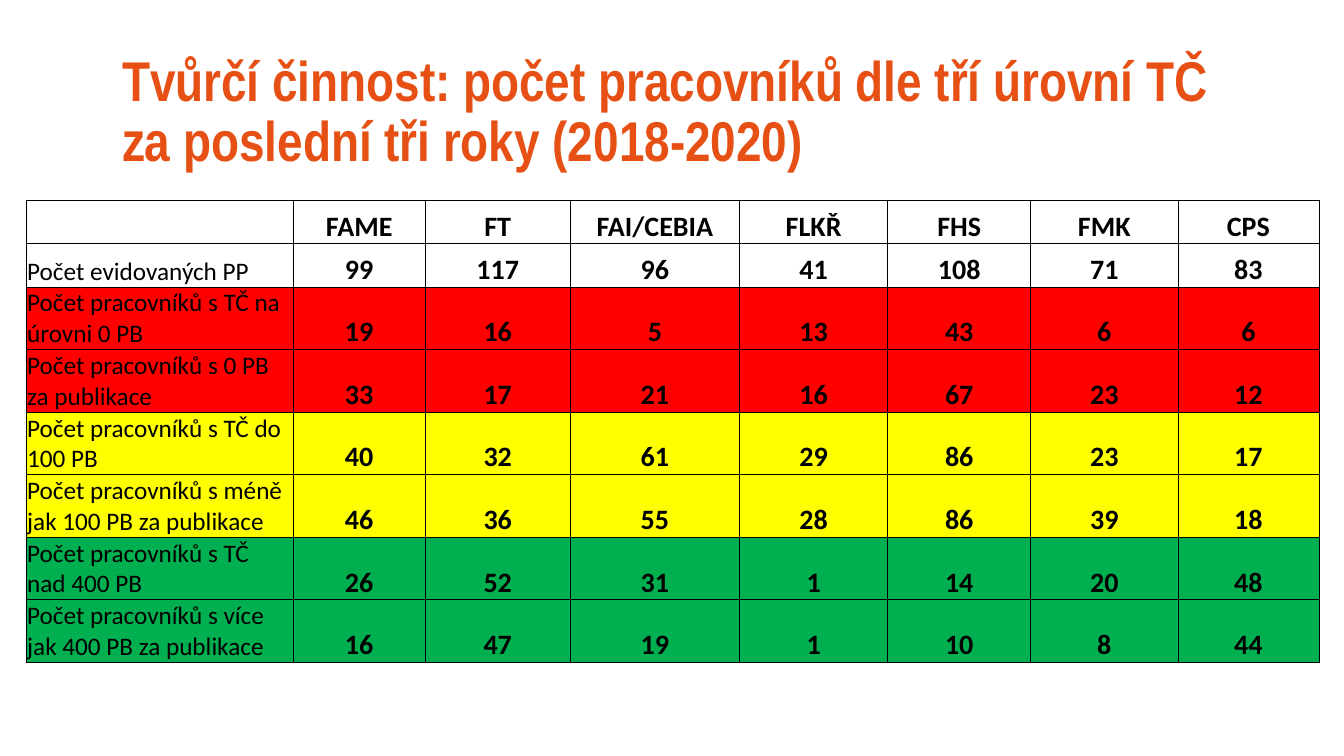
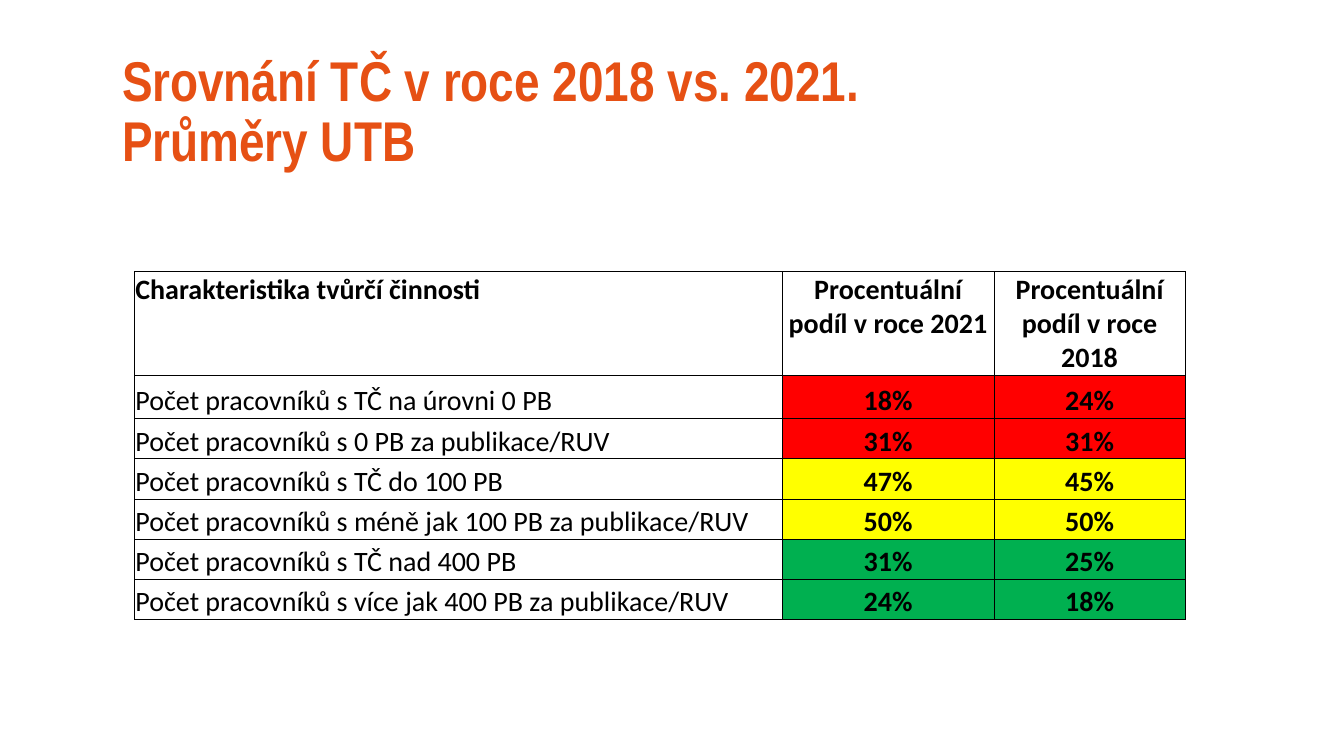
from dataclasses import dataclass

from lxml import etree
from pptx import Presentation, util as u
from pptx.dml.color import RGBColor
from pptx.enum import text
from pptx.oxml import ns

W, H = u.Inches(13.33), u.Inches(7.5)
TITLE_ONLY = 5


@dataclass(frozen=True)
class Theme:
    accent: RGBColor = RGBColor.from_string("E65014")
    ink: RGBColor = RGBColor.from_string("000000")
    low: RGBColor = RGBColor.from_string("FF0000")
    middle: RGBColor = RGBColor.from_string("FFFF00")
    high: RGBColor = RGBColor.from_string("00B050")
    title_font: str = "Arial Narrow"
    table_font: str = "Calibri"
    title_size: float = 40
    value_size: float = 20
    label_size: float = 18
    border: float = 0.5
    title_box: tuple = (8.33, 5.33, 84.82, 19.33)


T = Theme()
LEVELS = [None, None, T.low, T.low, T.middle, T.middle, T.high, T.high]

STAFF = [
    ("", "FAME", "FT", "FAI/CEBIA", "FLKŘ", "FHS", "FMK", "CPS"),
    ("Počet evidovaných PP", 99, 117, 96, 41, 108, 71, 83),
    ("Počet pracovníků s TČ na úrovni 0 PB", 19, 16, 5, 13, 43, 6, 6),
    ("Počet pracovníků s 0 PB za publikace", 33, 17, 21, 16, 67, 23, 12),
    ("Počet pracovníků s TČ do 100 PB", 40, 32, 61, 29, 86, 23, 17),
    ("Počet pracovníků s méně jak 100 PB za publikace", 46, 36, 55, 28, 86, 39, 18),
    ("Počet pracovníků s TČ nad 400 PB", 26, 52, 31, 1, 14, 20, 48),
    ("Počet pracovníků s více jak 400 PB za publikace", 16, 47, 19, 1, 10, 8, 44),
]
SHARES = [
    ("Charakteristika tvůrčí činnosti", "Procentuální podíl v roce 2021",
     "Procentuální podíl v roce 2018"),
    ("Počet pracovníků s TČ na úrovni 0 PB", "18%", "24%"),
    ("Počet pracovníků s 0 PB za publikace/RUV", "31%", "31%"),
    ("Počet pracovníků s TČ do 100 PB", "47%", "45%"),
    ("Počet pracovníků s méně jak 100 PB za publikace/RUV", "50%", "50%"),
    ("Počet pracovníků s TČ nad 400 PB", "31%", "25%"),
    ("Počet pracovníků s více jak 400 PB za publikace/RUV", "24%", "18%"),
]


def place(box):
    """Turn left, top, width and height in percent of the slide into lengths."""
    return [int(side * share / 100) for side, share in zip((W, H, W, H), box)]


def add_run(p, words, font, size, color, bold):
    r = p.add_run()
    r.text = words
    r.font.name, r.font.size, r.font.bold = font, u.Pt(size), bold
    r.font.color.rgb = color


def add_titled_slide(prs, *lines):
    s = prs.slides.add_slide(prs.slide_layouts[TITLE_ONLY])
    sp = s.shapes.title
    sp.left, sp.top, sp.width, sp.height = place(T.title_box)
    tf = sp.text_frame
    tf.word_wrap, tf.auto_size = True, text.MSO_AUTO_SIZE.NONE
    tf.vertical_anchor = text.MSO_ANCHOR.MIDDLE
    p = tf.paragraphs[0]
    p.alignment, p.line_spacing = text.PP_ALIGN.LEFT, 0.9
    for i, line in enumerate(lines):
        if i:
            p.add_line_break()
        add_run(p, line, T.title_font, T.title_size, T.accent, True)
    return s


def set_borders(cell):
    tcPr = cell._tc.get_or_add_tcPr()
    for side in ("a:lnL", "a:lnR", "a:lnT", "a:lnB"):
        ln = etree.SubElement(tcPr, ns.qn(side), w=str(u.Pt(T.border)))
        fill = etree.SubElement(ln, ns.qn("a:solidFill"))
        etree.SubElement(fill, ns.qn("a:srgbClr"), val=str(T.ink))


def fill_cell(cell, words, size, bold, centred, anchor, color):
    set_borders(cell)
    if color is None:
        cell.fill.background()
    else:
        cell.fill.solid()
        cell.fill.fore_color.rgb = color
    cell.margin_left = cell.margin_right = cell.margin_top = u.Inches(0.01)
    cell.margin_bottom = 0
    cell.vertical_anchor = anchor
    if words:
        p = cell.text_frame.paragraphs[0]
        p.alignment = text.PP_ALIGN.CENTER if centred else text.PP_ALIGN.LEFT
        add_run(p, words, T.table_font, size, T.ink, bold)


def add_level_table(s, box, cols, rows, data, levels, label_size,
                    header_anchor=text.MSO_ANCHOR.BOTTOM, label_filled=True):
    """Add a table whose rows are coloured by level; cols and rows are weights."""
    left, top, width, height = place(box)
    table = s.shapes.add_table(len(rows), len(cols), left, top, width, height).table
    table.first_row = table.horz_banding = False
    for col, weight in zip(table.columns, cols):
        col.width = int(width * weight / sum(cols))
    for row, weight in zip(table.rows, rows):
        row.height = int(height * weight / sum(rows))
    for i, (values, level) in enumerate(zip(data, levels)):
        for j, value in enumerate(values):
            is_label = i > 0 and j == 0
            fill_cell(table.cell(i, j), str(value),
                      size=label_size if is_label else T.value_size,
                      bold=not is_label, centred=j > 0,
                      anchor=text.MSO_ANCHOR.BOTTOM if i else header_anchor,
                      color=level if j or label_filled else None)


def main():
    prs = Presentation()
    prs.slide_width, prs.slide_height = W, H

    s = add_titled_slide(prs, "Tvůrčí činnost: počet pracovníků dle tří úrovní TČ "
                              "za poslední tři roky (2018-2020)")
    add_level_table(s, (1.95, 26.5, 96.2, 61),
                    cols=[2.65, 1.31, 1.44, 1.68, 1.47, 1.42, 1.46, 1.4],
                    rows=[0.43] * 2 + [0.62] * 6,
                    data=STAFF, levels=LEVELS, label_size=T.label_size)

    s = add_titled_slide(prs, "Srovnání TČ v roce 2018 vs. 2021. ", "Průměry UTB")
    add_level_table(s, (10, 35.9, 78.2, 46),
                    cols=[6.43, 2.1, 1.9], rows=[1.03, 0.43] + [0.4] * 5,
                    data=SHARES, levels=LEVELS[1:], label_size=T.value_size,
                    header_anchor=text.MSO_ANCHOR.TOP, label_filled=False)

    prs.save("out.pptx")


if __name__ == "__main__":
    main()
